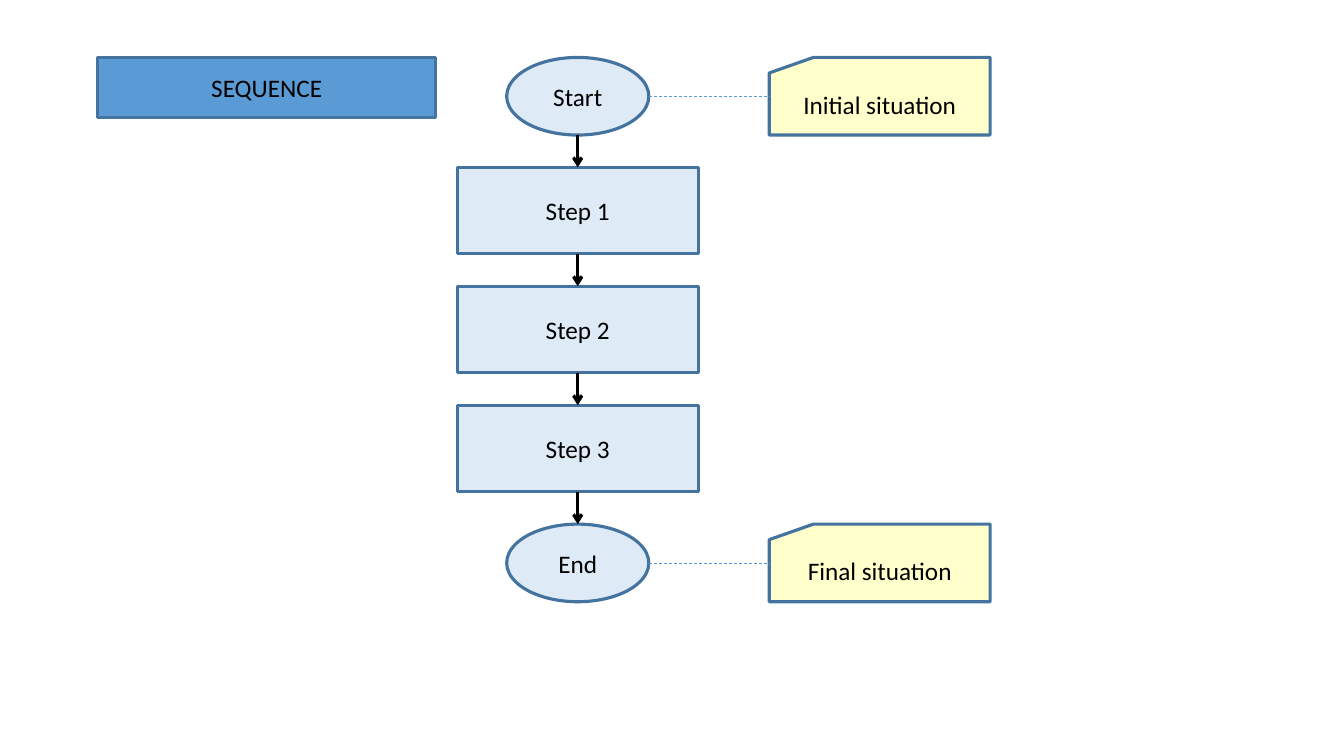
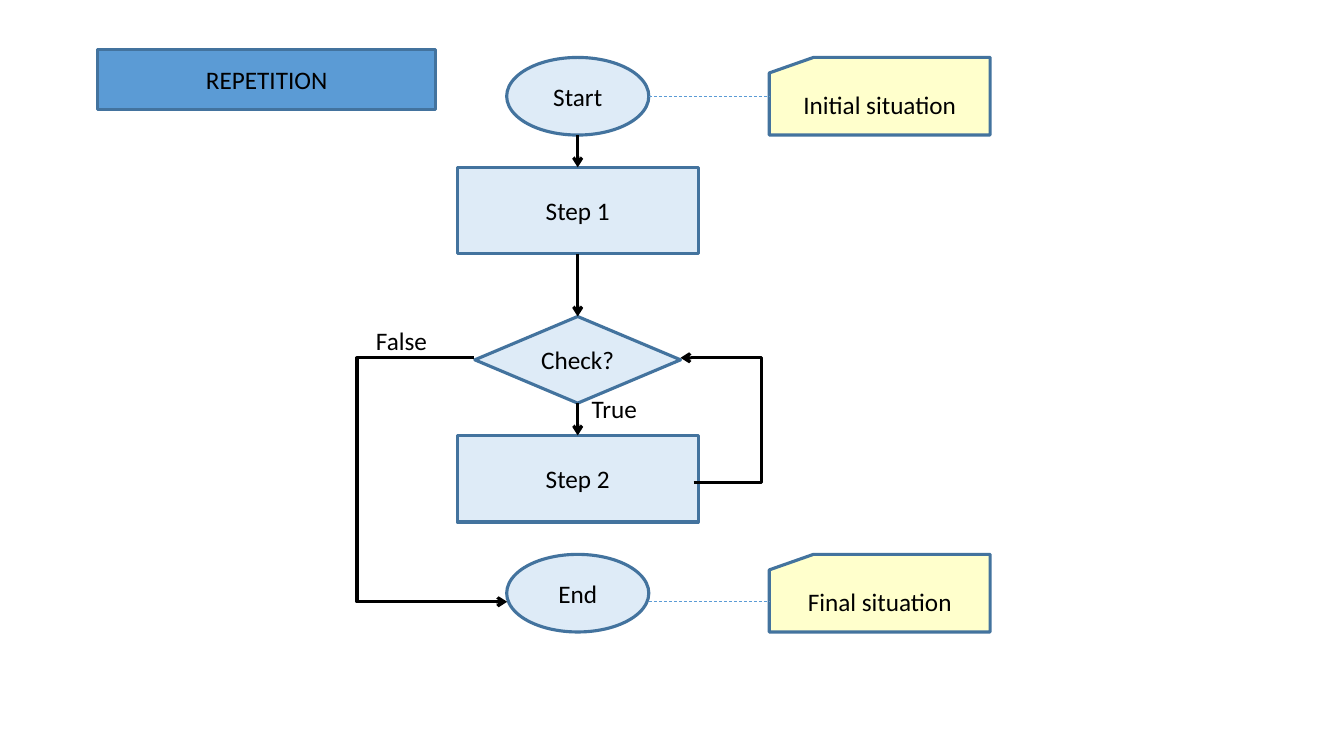
from dataclasses import dataclass

from lxml.etree import SubElement
from pptx import Presentation
from pptx.dml.color import RGBColor
from pptx.enum.dml import MSO_LINE
from pptx.enum.shapes import MSO_CONNECTOR, MSO_SHAPE
from pptx.enum.text import MSO_ANCHOR, MSO_AUTO_SIZE, PP_ALIGN
from pptx.oxml.ns import qn
from pptx.util import Inches, Pt


@dataclass(frozen=True)
class Theme:
    font: str = "Calibri"
    size: float = 18
    ink: str = "000000"
    banner: str = "5B9BD5"
    node: str = "DEEBF7"
    note: str = "FFFFCC"
    outline: str = "43739E"
    thick: float = 2.25
    thin: float = 0.5


THEME = Theme()

# Layout grid, in inches
TOP = 0.57
AXIS = 5.73
GAP = 0.32
NOTE_LEFT, NOTE_WIDTH = 7.63, 2.19
BANNER_LEFT, BANNER_WIDTH, BANNER_HEIGHT = 0.97, 3.35, 0.6

# Kind of flowchart node: preset, width, height
TERMINAL = (MSO_SHAPE.OVAL, 1.41, 0.77)
STEP = (MSO_SHAPE.RECTANGLE, 2.39, 0.86)
CHECK = (MSO_SHAPE.DIAMOND, 2.04, 0.86)

# Connection sites of rectangles, diamonds and cards
SITE_TOP, SITE_LEFT, SITE_BOTTOM = 0, 1, 2


def write_text(shape, text, align=PP_ALIGN.CENTER, anchor=MSO_ANCHOR.MIDDLE, wrap=True,
               fit=MSO_AUTO_SIZE.NONE):
    frame = shape.text_frame
    frame.text = text
    frame.word_wrap = wrap
    frame.auto_size = fit
    frame.vertical_anchor = anchor
    paragraph = frame.paragraphs[0]
    paragraph.alignment = align
    font = paragraph.runs[0].font
    font.name = THEME.font
    font.size = Pt(THEME.size)
    font.color.rgb = RGBColor.from_string(THEME.ink)


def style_line(line, color, width, dash=None):
    line.color.rgb = RGBColor.from_string(color)
    line.width = Pt(width)
    if dash:
        line.dash_style = dash


def fill_and_outline(shape, color):
    shape.fill.solid()
    shape.fill.fore_color.rgb = RGBColor.from_string(color)
    style_line(shape.line, THEME.outline, THEME.thick)


def add_arrowhead(shape):
    SubElement(shape.line._get_or_add_ln(), qn("a:tailEnd"), type="arrow")


def add_banner(slide, text, top):
    banner = slide.shapes.title
    banner.left, banner.top = Inches(BANNER_LEFT), Inches(top)
    banner.width, banner.height = Inches(BANNER_WIDTH), Inches(BANNER_HEIGHT)
    fill_and_outline(banner, THEME.banner)
    write_text(banner, text)


def add_box(slide, preset, left, top, width, height, text, color):
    box = slide.shapes.add_shape(preset, *map(Inches, (left, top, width, height)))
    box.shadow.inherit = False
    fill_and_outline(box, color)
    write_text(box, text)
    return box


def add_straight(slide, start, end):
    straight = slide.shapes.add_connector(MSO_CONNECTOR.STRAIGHT, *start, *end)
    SubElement(straight._element.spPr, qn("a:effectLst"))
    return straight


def add_flow_arrow(slide, upper, lower):
    x = Inches(AXIS)
    arrow = add_straight(slide, (x, upper.top + upper.height), (x, lower.top))
    if upper.auto_shape_type != MSO_SHAPE.OVAL:
        arrow.begin_connect(upper, SITE_BOTTOM)
    if lower.auto_shape_type != MSO_SHAPE.OVAL:
        arrow.end_connect(lower, SITE_TOP)
    style_line(arrow.line, THEME.ink, THEME.thick)
    add_arrowhead(arrow)


def add_flow(slide, nodes):
    """Stack (kind, text, gap above) nodes along the axis."""
    boxes, top = [], TOP
    for (preset, width, height), text, gap in nodes:
        top += gap
        boxes.append(add_box(slide, preset, AXIS - width / 2, top, width, height, text, THEME.node))
        top += height
    return boxes


def add_note(slide, terminal, text, line_y=None):
    """Put a card beside a terminal; line_y sets a height off its middle."""
    top, height = terminal.top.inches, terminal.height.inches
    card = add_box(slide, MSO_SHAPE.FLOWCHART_CARD, NOTE_LEFT, top, NOTE_WIDTH, height,
                   text, THEME.note)
    y = Inches(line_y or top + height / 2)
    link = add_straight(slide, (terminal.left + terminal.width, y), (card.left, y))
    if line_y is None:
        link.end_connect(card, SITE_LEFT)
    style_line(link.line, THEME.banner, THEME.thin, MSO_LINE.DASH)


def add_branch(slide, points):
    start, *corners = [(Inches(x), Inches(y)) for x, y in points]
    builder = slide.shapes.build_freeform(*start)
    builder.add_line_segments(corners, close=False)
    branch = builder.convert_to_shape()
    branch.shadow.inherit = False
    branch.fill.background()
    style_line(branch.line, THEME.ink, THEME.thick)
    add_arrowhead(branch)


def add_label(slide, text, left, top, width):
    label = slide.shapes.add_textbox(*map(Inches, (left, top, width, 0.4)))
    write_text(label, text, align=PP_ALIGN.LEFT, anchor=MSO_ANCHOR.TOP, wrap=False,
               fit=MSO_AUTO_SIZE.SHAPE_TO_FIT_TEXT)


def add_slide(deck, title, banner_top, nodes):
    slide = deck.slides.add_slide(deck.slide_layouts[5])
    add_banner(slide, title, banner_top)
    boxes = add_flow(slide, [(TERMINAL, "Start", 0), *nodes, (TERMINAL, "End", GAP)])
    add_note(slide, boxes[0], "Initial situation")
    return slide, boxes


def build_sequence(deck):
    steps = [(STEP, f"Step {number}", GAP) for number in range(1, 4)]
    slide, boxes = add_slide(deck, "SEQUENCE", TOP, steps)
    for upper, lower in zip(boxes, boxes[1:]):
        add_flow_arrow(slide, upper, lower)
    add_note(slide, boxes[-1], "Final situation")


def build_repetition(deck):
    nodes = [(STEP, "Step 1", GAP), (CHECK, "Check?", 0.62), (STEP, "Step 2", GAP)]
    slide, (*loop, end) = add_slide(deck, "REPETITION", 0.49, nodes)
    for upper, lower in zip(loop, loop[1:]):
        add_flow_arrow(slide, upper, lower)

    # Exit branch to the end, and return branch to the check
    check_y, exit_y, exit_x = 3.55, 5.97, 3.54
    add_branch(slide, [(4.7, check_y), (exit_x, check_y), (exit_x, exit_y), (5.03, exit_y)])
    return_x, step_y = 7.55, 4.79
    add_branch(slide, [(6.88, step_y), (return_x, step_y), (return_x, check_y), (6.75, check_y)])
    add_label(slide, "True", 5.77, 3.85, 0.66)
    add_label(slide, "False", 3.63, 3.18, 0.71)
    add_note(slide, end, "Final situation", line_y=exit_y)


def main():
    deck = Presentation()
    deck.slide_width, deck.slide_height = Inches(13.33), Inches(7.5)
    build_sequence(deck)
    build_repetition(deck)
    deck.save("out.pptx")


if __name__ == "__main__":
    main()
